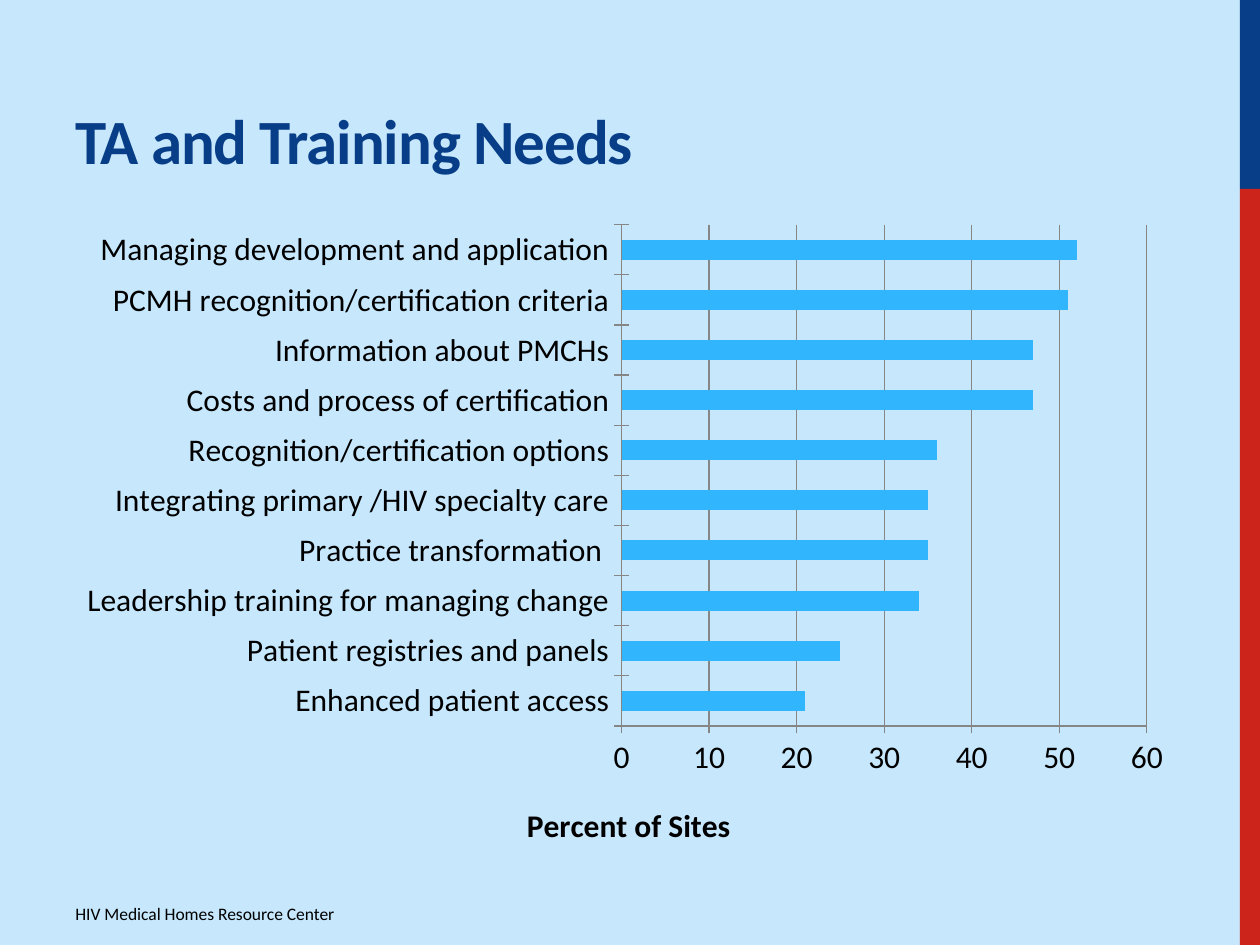
from dataclasses import dataclass

from lxml import etree
from pptx import Presentation
from pptx.chart.data import CategoryChartData
from pptx.dml.color import RGBColor
from pptx.enum import chart as charts, shapes, text
from pptx.oxml import ns
from pptx.util import Pt


@dataclass(frozen=True)
class Theme:
    font: str = "Calibri"
    panel: RGBColor = RGBColor(0xC6, 0xE7, 0xFC)
    navy: RGBColor = RGBColor(0x07, 0x3E, 0x87)
    red: RGBColor = RGBColor(0xCC, 0x24, 0x1B)
    bar: RGBColor = RGBColor(0x31, 0xB6, 0xFD)
    ink: RGBColor = RGBColor(0, 0, 0)
    axis: RGBColor = RGBColor(0x86, 0x86, 0x86)
    title_size: Pt = Pt(36)
    chart_size: Pt = Pt(18)
    footer_size: Pt = Pt(10)


THEME = Theme()
WIDTH, HEIGHT = Pt(720), Pt(540)
NEEDS = [
    ("Enhanced patient access", 21),
    (" Patient registries and panels", 25),
    ("Leadership training for managing change", 34),
    ("Practice transformation ", 35),
    ("Integrating primary /HIV specialty care", 35),
    ("Recognition/certification options", 36),
    (" Costs and process of certification", 47),
    ("Information about PMCHs", 47),
    ("PCMH recognition/certification criteria", 51),
    ("Managing development and application", 52),
]


def style_font(font, size, color, bold=False):
    font.name = THEME.font
    font.size = size
    font.bold = bold
    font.color.rgb = color


def add_background(slide, left, top, width, height):
    stripe = Pt(11.5)
    navy_height = Pt(108)
    edge = left + width - stripe
    blocks = [
        (left, top, width - stripe, height, THEME.panel),
        (edge, top, stripe, navy_height, THEME.navy),
        (edge, top + navy_height, stripe, height - navy_height, THEME.red),
    ]
    for *box, color in blocks:
        block = slide.shapes.add_shape(shapes.MSO_SHAPE.RECTANGLE, *box)
        block.shadow.inherit = False
        block.fill.solid()
        block.fill.fore_color.rgb = color
        block.line.fill.background()


def place_title(slide, left, top, width, height):
    title = slide.shapes.title
    title.left, title.top, title.width, title.height = left, top, width, height
    frame = title.text_frame
    frame.text = "TA and Training Needs"
    frame.auto_size = text.MSO_AUTO_SIZE.NONE
    frame.vertical_anchor = text.MSO_ANCHOR.BOTTOM
    paragraph = frame.paragraphs[0]
    paragraph.alignment = text.PP_ALIGN.LEFT
    style_font(paragraph.font, THEME.title_size, THEME.navy, bold=True)
    paragraph.runs[0].font._element.set("spc", "-60")


def add_footer(slide, left, top, width, height):
    frame = slide.shapes.add_textbox(left, top, width, height).text_frame
    frame.word_wrap = True
    frame.vertical_anchor = text.MSO_ANCHOR.MIDDLE
    paragraph = frame.paragraphs[0]
    paragraph.text = "HIV Medical Homes Resource Center"
    style_font(paragraph.font, THEME.footer_size, THEME.ink)


def set_layout(element, position, **settings):
    for existing in element.findall(ns.qn("c:layout")):
        element.remove(existing)
    layout = etree.Element(ns.qn("c:layout"))
    manual = etree.SubElement(layout, ns.qn("c:manualLayout"))
    for name, value in settings.items():
        etree.SubElement(manual, ns.qn(f"c:{name}"), val=str(value))
    element.insert(position, layout)


def add_needs_chart(slide, left, top, width, height):
    data = CategoryChartData()
    data.categories = [name for name, _ in NEEDS]
    data.add_series("Series 1", [value for _, value in NEEDS])
    chart = slide.shapes.add_chart(
        charts.XL_CHART_TYPE.BAR_CLUSTERED, left, top, width, height, data
    ).chart
    chart.has_legend = False
    chart.has_title = False
    style_font(chart.font, THEME.chart_size, THEME.ink)

    plot = chart.plots[0]
    plot.vary_by_categories = False
    plot.gap_width = 150
    fill = plot.series[0].format.fill
    fill.solid()
    fill.fore_color.rgb = THEME.bar

    value_axis = chart.value_axis
    value_axis.minimum_scale, value_axis.maximum_scale = 0, 60
    value_axis.major_unit = 10
    value_axis.has_major_gridlines = True
    for axis in (chart.category_axis, value_axis):
        axis.major_tick_mark = charts.XL_TICK_MARK.CROSS
        axis.minor_tick_mark = charts.XL_TICK_MARK.NONE
    for part in (chart.category_axis, value_axis, value_axis.major_gridlines):
        part.format.line.color.rgb = THEME.axis
        part.format.line.width = Pt(0.75)

    axis_title = value_axis.axis_title
    paragraph = axis_title.text_frame.paragraphs[0]
    paragraph.text = "Percent of Sites"
    style_font(paragraph.font, THEME.chart_size, THEME.ink, bold=True)
    set_layout(axis_title._element, 1, xMode="edge", yMode="edge", x=0.41, y=0.9)
    plot_area = chart._chartSpace.find(f".//{ns.qn('c:plotArea')}")
    set_layout(plot_area, 0, layoutTarget="inner", xMode="edge", yMode="edge",
               x=0.5, y=0.02, w=0.47, h=0.77)


def main():
    presentation = Presentation()
    presentation.slide_width, presentation.slide_height = WIDTH, HEIGHT
    slide = presentation.slides.add_slide(presentation.slide_layouts.get_by_name("Title Only"))
    margin, content_width = Pt(36), Pt(638.5)
    add_background(slide, 0, 0, WIDTH, HEIGHT)
    title = slide.shapes.title._element
    title.getparent().append(title)
    add_footer(slide, margin, Pt(511), Pt(270), Pt(22.5))
    place_title(slide, margin, Pt(21.5), content_width, Pt(83.5))
    add_needs_chart(slide, margin, Pt(121), content_width, Pt(372))
    presentation.save("out.pptx")


if __name__ == "__main__":
    main()
